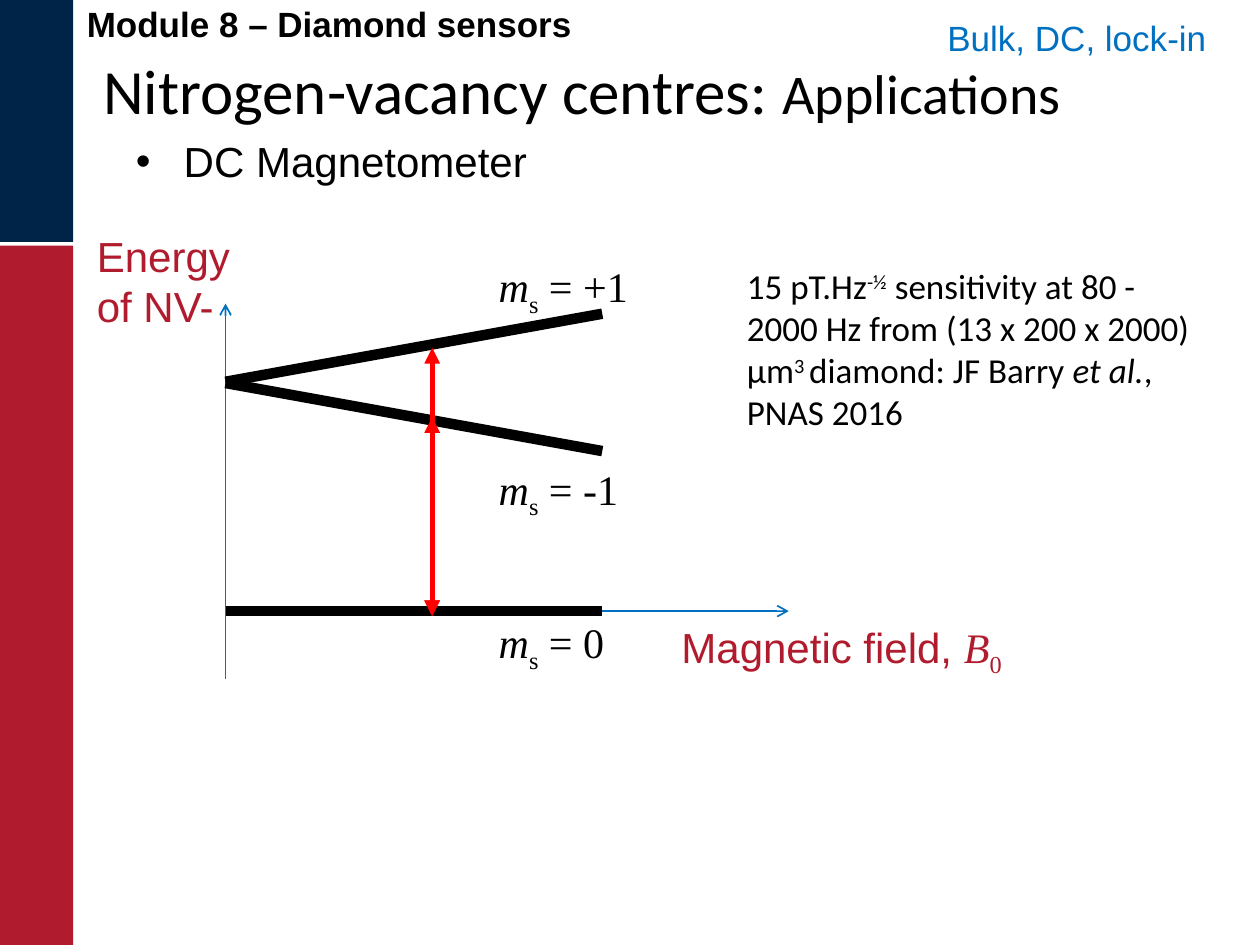
from dataclasses import dataclass

from lxml import etree
from pptx import Presentation
from pptx import util as u
from pptx.dml.color import RGBColor
from pptx.enum import shapes, text
from pptx.oxml.ns import qn


@dataclass(frozen=True)
class Theme:
    navy: str = "002448"
    crimson: str = "B01C2E"
    blue: str = "0070C0"
    black: str = "000000"
    red: str = "FF0000"
    sans: str = "Arial"
    heading: str = "Calibri"
    serif: str = "Times New Roman"
    title: int = 36
    subtitle: int = 32
    body: int = 24
    small: int = 20


THEME = Theme()


def add_run(paragraph, content, *, font, size, color=THEME.black,
            bold=False, italic=False, baseline=0):
    """Append a run; baseline is a percentage, negative for subscript."""
    run = paragraph.add_run()
    run.text = content
    run.font.name = font
    run.font.size = u.Pt(size)
    run.font.color.rgb = RGBColor.from_string(color)
    run.font.bold = bold
    run.font.italic = italic
    if baseline:
        run.font._element.set("baseline", str(baseline * 1000))


class SlideBuilder:
    def __init__(self, presentation, theme):
        self.theme = theme
        self.slide = presentation.slides.add_slide(presentation.slide_layouts[5])

    def bar(self, left, top, width, height, color):
        shape = self.slide.shapes.add_shape(
            shapes.MSO_SHAPE.RECTANGLE, *map(u.Inches, (left, top, width, height)))
        shape.shadow.inherit = False
        shape.fill.solid()
        shape.fill.fore_color.rgb = RGBColor.from_string(color)
        shape.line.fill.background()

    def line(self, start, end, color, width, head=None, tail=None):
        connector = self.slide.shapes.add_connector(
            shapes.MSO_CONNECTOR.STRAIGHT, *map(u.Inches, (*start, *end)))
        connector.line.color.rgb = RGBColor.from_string(color)
        connector.line.width = u.Pt(width)
        outline = connector.line._get_or_add_ln()
        for tag, kind in (("a:headEnd", head), ("a:tailEnd", tail)):
            if kind:
                etree.SubElement(outline, qn(tag), type=kind)
        etree.SubElement(connector._element.spPr, qn("a:effectLst"))

    def title(self, left, top, width, height):
        shape = self.slide.shapes.title
        shape.left, shape.top, shape.width, shape.height = map(
            u.Inches, (left, top, width, height))
        frame = shape.text_frame
        frame.auto_size = text.MSO_AUTO_SIZE.NONE
        frame.vertical_anchor = text.MSO_ANCHOR.TOP
        paragraph = frame.paragraphs[0]
        paragraph.alignment = text.PP_ALIGN.LEFT
        return paragraph

    def text_box(self, left, top, width, height, wrap=True):
        box = self.slide.shapes.add_textbox(
            *map(u.Inches, (left, top, width, height)))
        box.text_frame.word_wrap = wrap
        return box.text_frame.paragraphs[0]

    def label(self, content, position, wrap=True, **style):
        paragraph = self.text_box(*position, wrap=wrap)
        add_run(paragraph, content, **style)
        return paragraph

    def bullet(self, content, position, indent, **style):
        paragraph = self.text_box(*position)
        properties = paragraph._p.get_or_add_pPr()
        properties.set("marL", str(u.Inches(indent)))
        properties.set("indent", str(-u.Inches(indent)))
        etree.SubElement(properties, qn("a:buFont"), typeface=self.theme.sans)
        etree.SubElement(properties, qn("a:buChar"), char="•")
        add_run(paragraph, content, **style)

    def symbol(self, paragraph, letter, subscript, color):
        style = dict(font=self.theme.serif, size=self.theme.body, color=color)
        add_run(paragraph, letter, italic=True, **style)
        add_run(paragraph, subscript, baseline=-25, **style)

    def spin_labels(self, position, levels):
        """Stack m_s labels from (value, points of space before) pairs."""
        paragraph = self.text_box(*position)
        frame = self.slide.shapes[-1].text_frame
        for index, (value, gap) in enumerate(levels):
            if index:
                paragraph = frame.add_paragraph()
                paragraph.space_before = u.Pt(gap)
            self.symbol(paragraph, "m", "s", self.theme.black)
            add_run(paragraph, f" = {value}", font=self.theme.serif,
                    size=self.theme.body)


def add_energy_diagram(builder):
    theme = builder.theme
    origin, level_end, ground = 1.79, 4.78, 4.85
    builder.line((origin, 5.39), (origin, 2.41), theme.blue, 1, tail="arrow")
    builder.line((origin, ground), (6.26, ground), theme.blue, 1, tail="arrow")
    for start, end in ((3.03, 2.49), (3.04, 3.58), (ground, ground)):
        builder.line((origin, start), (level_end, end), theme.black, 6)
    for top in (3.31, 2.76):
        builder.line((3.43, 4.89), (3.43, top), theme.red, 3,
                     head="triangle", tail="triangle")

    axis_style = dict(font=theme.sans, size=theme.body, color=theme.crimson)
    field = builder.label("Magnetic field, ", (5.31, 4.88, 2.88, 0.51),
                          wrap=False, **axis_style)
    builder.symbol(field, "B", "0", theme.crimson)
    builder.label("Energy of NV-", (0.67, 1.78, 1.32, 0.91), **axis_style)
    builder.spin_labels((3.86, 2.02, 1.37, 3.33),
                        (("+1", 0), ("-1", 83), ("0", 55)))


def main():
    presentation = Presentation()
    presentation.slide_width = u.Inches(10)
    presentation.slide_height = u.Inches(7.5)
    theme = THEME
    builder = SlideBuilder(presentation, theme)

    builder.bar(0, 0, 0.58, 1.92, theme.navy)
    builder.bar(0, 1.95, 0.58, 5.55, theme.crimson)
    builder.label("Module 8 – Diamond sensors", (0.59, -0.03, 8.58, 1),
                  font=theme.sans, size=theme.small, bold=True)
    title = builder.title(0.72, 0.36, 9, 1.78)
    add_run(title, "Nitrogen-vacancy centres: ", font=theme.heading, size=theme.title)
    add_run(title, "Applications", font=theme.heading, size=theme.subtitle)
    builder.bullet("DC Magnetometer", (0.98, 1.03, 8.11, 3.47), 0.38,
                   font=theme.sans, size=theme.body)
    builder.label("Bulk, DC, lock-in", (7.42, 0.08, 2.28, 0.44), wrap=False,
                  font=theme.sans, size=theme.small, color=theme.blue)

    add_energy_diagram(builder)

    result = builder.text_box(5.83, 2.05, 3.84, 1.45)
    for content, extra in (
        ("15 pT.Hz", {}),
        ("-½", {"baseline": 30}),
        (" sensitivity at 80 - 2000 Hz from (13 x 200 x 2000) µm", {}),
        ("3 ", {"baseline": 30}),
        ("diamond: JF Barry ", {}),
        ("et al.", {"italic": True}),
        (", PNAS 2016", {}),
    ):
        add_run(result, content, font=theme.heading, size=theme.small, **extra)

    presentation.save("out.pptx")


if __name__ == "__main__":
    main()
